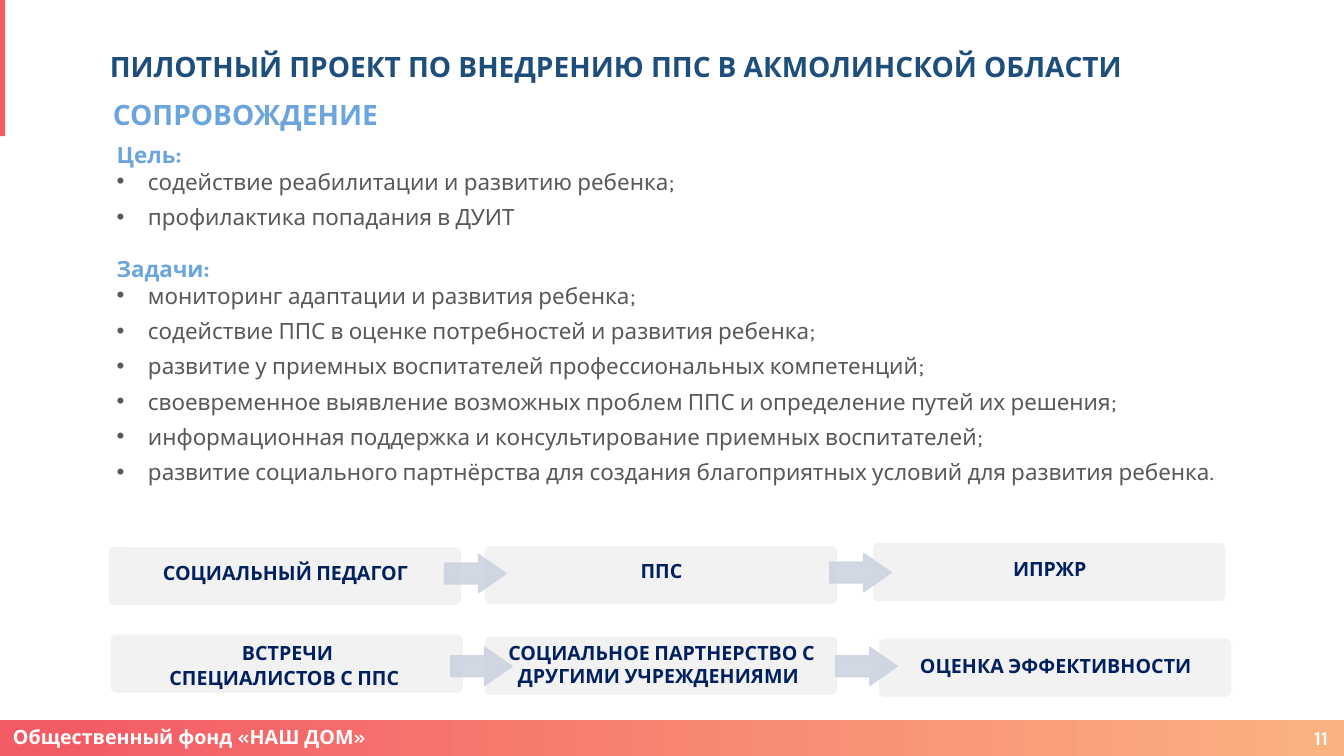
from dataclasses import dataclass

import pptx
import pptx.util
import pptx.dml.color
import pptx.enum.shapes
import pptx.enum.text
import pptx.oxml.ns
import lxml.etree

Inches = pptx.util.Inches
Pt = pptx.util.Pt
RGB = pptx.dml.color.RGBColor
Kind = pptx.enum.shapes.MSO_SHAPE
Align = pptx.enum.text.PP_ALIGN
Anchor = pptx.enum.text.MSO_ANCHOR
qn = pptx.oxml.ns.qn

WHITE = RGB(0xFF, 0xFF, 0xFF)
CORAL = RGB(0xF3, 0x5C, 0x65)
PEACH = RGB(0xFB, 0xB2, 0x81)
NAVY = RGB(0x1E, 0x4E, 0x7B)
SKY = RGB(0x6B, 0xA5, 0xDB)
GRAY = RGB(0x59, 0x59, 0x59)
PALE = RGB(0xF2, 0xF2, 0xF2)
INK = RGB(0x00, 0x20, 0x60)
STEEL = RGB(0xCD, 0xD4, 0xE0)


@dataclass
class Area:
    left: float
    top: float
    width: float
    height: float

    def place(self) -> tuple:
        return tuple(map(Inches, (self.left, self.top, self.width, self.height)))


@dataclass
class Label:
    area: Area
    text: str
    size: int
    color: RGB
    align: Align = Align.LEFT
    anchor: Anchor = Anchor.MIDDLE
    space: float = 1.0


@dataclass
class Block:
    area: Area
    head: str
    items: list[str]


@dataclass
class Step:
    left: float
    top: float
    text_top: float
    text_height: float
    lines: list[str]
    space: float = 0.9


LABELS = [
    Label(Area(0.03, 7.22, 9.18, 0.21), "Общественный фонд «НАШ ДОМ»", 14, WHITE, space=0.9),
    Label(Area(0.99, 0.21, 10.59, 0.89),
          "ПИЛОТНЫЙ ПРОЕКТ ПО ВНЕДРЕНИЮ ППС В АКМОЛИНСКОЙ ОБЛАСТИ", 20, NAVY),
    Label(Area(12.72, 7.19, 0.55, 0.26), "11", 14, WHITE, Align.RIGHT),
    Label(Area(1.02, 0.92, 4.12, 0.44), "СОПРОВОЖДЕНИЕ", 20, SKY, Align.JUSTIFY, Anchor.TOP),
]

BLOCKS = [
    Block(Area(1.06, 1.35, 11.24, 0.99), "Цель:", [
        "содействие реабилитации и развитию ребенка;",
        "профилактика попадания в ДУИТ",
    ]),
    Block(Area(1.06, 2.48, 11.24, 2.41), "Задачи:", [
        "мониторинг адаптации и развития ребенка;",
        "содействие ППС в оценке потребностей и развития ребенка;",
        "развитие у приемных воспитателей профессиональных компетенций;",
        "своевременное выявление возможных проблем ППС и определение путей их решения;",
        "информационная поддержка и консультирование приемных воспитателей;",
        "развитие социального партнёрства для создания благоприятных условий "
        "для развития ребенка.",
    ]),
]

STEPS = [
    Step(1.07, 5.42, 5.41, 0.52, ["СОЦИАЛЬНЫЙ ПЕДАГОГ"]),
    Step(4.8, 5.41, 5.38, 0.53, ["ППС"]),
    Step(8.65, 5.38, 5.38, 0.5, ["ИПРЖР"]),
    Step(1.09, 6.29, 6.31, 0.5, ["ВСТРЕЧИ", "СПЕЦИАЛИСТОВ С ППС"], 1.0),
    Step(4.8, 6.31, 6.3, 0.53, ["СОЦИАЛЬНОЕ ПАРТНЕРСТВО С ДРУГИМИ УЧРЕЖДЕНИЯМИ"]),
    Step(8.71, 6.33, 6.33, 0.53, ["ОЦЕНКА ЭФФЕКТИВНОСТИ"]),
]

ARROWS = [(4.41, 5.5), (8.23, 5.49), (4.47, 6.42), (8.29, 6.42)]


def add_shape(slide, kind: Kind, area: Area, fill: RGB):
    shape = slide.shapes.add_shape(kind, *area.place())
    shape.shadow.inherit = False
    shape.fill.solid()
    shape.fill.fore_color.rgb = fill
    shape.line.fill.background()
    return shape


def add_frame(slide, area: Area, anchor: Anchor):
    frame = slide.shapes.add_textbox(*area.place()).text_frame
    frame.word_wrap = True
    frame.vertical_anchor = anchor
    return frame


def add_run(para, text: str, size: int, color: RGB, bold: bool = True,
            face: str = "Karla") -> None:
    run = para.add_run()
    run.text = text
    run.font.size = Pt(size)
    run.font.name = face
    run.font.bold = bold
    run.font.color.rgb = color


def add_bars(slide) -> None:
    foot = add_shape(slide, Kind.RECTANGLE, Area(0, 7.14, 13.33, 0.36), CORAL)
    foot.fill.gradient()
    foot.fill.gradient_angle = 0
    stops = foot.fill.gradient_stops
    for stop, color, spot in zip(stops, (CORAL, PEACH), (0.05, 1.0)):
        stop.color.rgb = color
        stop.position = spot
    add_shape(slide, Kind.RECTANGLE, Area(0, 0, 0.05, 1.35), CORAL)


def add_label(slide, label: Label) -> None:
    para = add_frame(slide, label.area, label.anchor).paragraphs[0]
    para.alignment = label.align
    para.line_spacing = label.space
    add_run(para, label.text, label.size, label.color)


def add_block(slide, block: Block) -> None:
    frame = add_frame(slide, block.area, Anchor.TOP)
    head = frame.paragraphs[0]
    head.alignment = Align.JUSTIFY
    add_run(head, block.head, 16, SKY)
    for item in block.items:
        para = frame.add_paragraph()
        para.alignment = Align.JUSTIFY
        para.space_after = Pt(6)
        props = para._p.get_or_add_pPr()
        props.set("marL", str(Inches(0.31)))
        props.set("indent", str(-Inches(0.31)))
        lxml.etree.SubElement(props, qn("a:buFont"), typeface="Arial")
        lxml.etree.SubElement(props, qn("a:buChar"), char="•")
        add_run(para, item, 16, GRAY, False)


def add_step(slide, step: Step) -> None:
    box = add_shape(slide, Kind.ROUNDED_RECTANGLE, Area(step.left, step.top, 3.51, 0.59), PALE)
    box.adjustments[0] = 0.1
    box.line.color.rgb = WHITE
    box.line.width = Pt(1)
    area = Area(step.left + 0.02, step.text_top, 3.42, step.text_height)
    frame = add_frame(slide, area, Anchor.MIDDLE)
    frame.margin_left = frame.margin_right = Inches(0.08)
    frame.margin_top = frame.margin_bottom = Inches(0.04)
    for rank, line in enumerate(step.lines):
        para = frame.add_paragraph() if rank else frame.paragraphs[0]
        para.alignment = Align.CENTER
        para.line_spacing = step.space
        if rank == 0:
            add_run(para, " ", 20, INK, face="Cabin")
        add_run(para, line, 14, INK, face="Cabin")


def add_arrow(slide, left: float, top: float) -> None:
    arrow = add_shape(slide, Kind.RIGHT_ARROW, Area(left, top, 0.61, 0.38), STEEL)
    arrow.adjustments[0] = 0.55
    arrow.adjustments[1] = 0.72
    arrow.line.color.rgb = STEEL
    arrow.line.width = Pt(1)
    for color in arrow._element.spPr.iter(qn("a:srgbClr")):
        lxml.etree.SubElement(color, qn("a:alpha"), val="90000")


def main() -> None:
    deck = pptx.Presentation()
    deck.slide_width = Inches(13.33)
    deck.slide_height = Inches(7.5)
    slide = deck.slides.add_slide(deck.slide_layouts[6])
    add_bars(slide)
    for label in LABELS:
        add_label(slide, label)
    for block in BLOCKS:
        add_block(slide, block)
    for step in STEPS:
        add_step(slide, step)
    for left, top in ARROWS:
        add_arrow(slide, left, top)
    deck.save("out.pptx")


if __name__ == "__main__":
    main()
